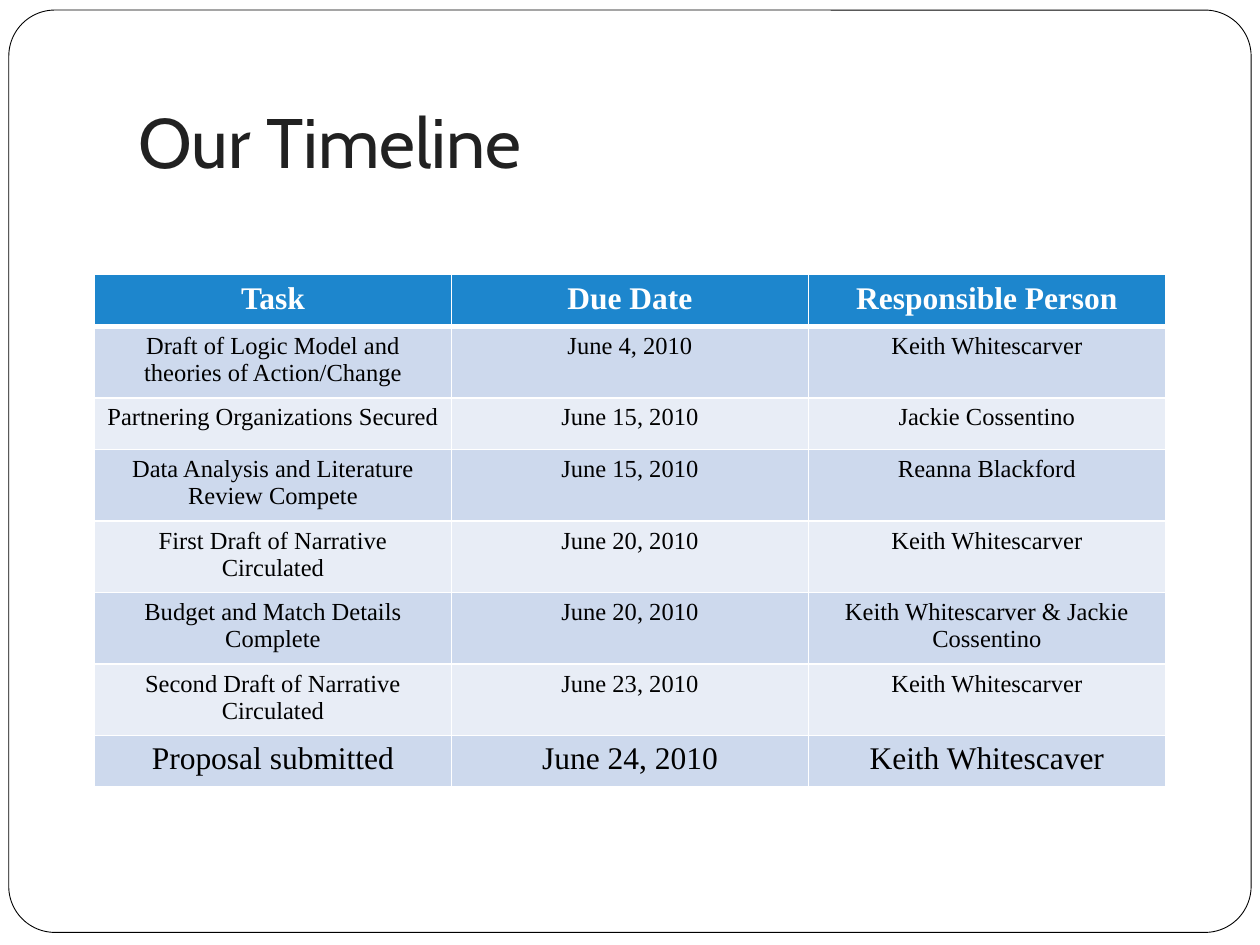
from lxml.etree import SubElement
from pptx import Presentation
from pptx.dml.color import RGBColor
from pptx.enum.shapes import MSO_SHAPE
from pptx.enum.text import MSO_ANCHOR, PP_ALIGN
from pptx.oxml.ns import qn
from pptx.util import Inches, Pt

WHITE, BLACK = "FFFFFF", "000000"
HEADER_FILL, BAND_FILLS = "1D86CD", ("CDD9ED", "E8EDF6")
ROW_HEIGHT = 0.41

HEADINGS = ("Task", "Due Date", "Responsible Person")
TASKS = (
    ("Draft of Logic Model and theories of Action/Change", "June 4, 2010", "Keith Whitescarver"),
    ("Partnering Organizations Secured", "June 15, 2010", "Jackie Cossentino"),
    ("Data Analysis and Literature Review Compete", "June 15, 2010", "Reanna Blackford"),
    ("First Draft of Narrative Circulated", "June 20, 2010", "Keith Whitescarver"),
    ("Budget and Match Details Complete", "June 20, 2010", "Keith Whitescarver & Jackie Cossentino"),
    ("Second Draft of Narrative Circulated", "June 23, 2010", "Keith Whitescarver"),
    ("Proposal submitted", "June 24, 2010", "Keith Whitescaver"),
)


def color(hex_text):
    return RGBColor.from_string(hex_text)


def add_span(para, text, font, size, hex_text, bold=False):
    span = para.add_run()
    span.text = text
    span.font.name = font
    span.font.size = Pt(size)
    span.font.bold = bold
    span.font.color.rgb = color(hex_text)


def add_frame(page):
    frame = page.shapes.add_shape(MSO_SHAPE.ROUNDED_RECTANGLE, Inches(0.07), Inches(0.08),
                                  Inches(9.86), Inches(7.32))
    frame.adjustments[0] = 0.05
    frame.shadow.inherit = False
    frame.fill.solid()
    frame.fill.fore_color.rgb = color(WHITE)
    frame.line.color.rgb = color(BLACK)
    frame.line.width = Pt(0.5)


def add_title(page, text):
    box = page.shapes.add_textbox(Inches(1), Inches(0.3), Inches(8.5), Inches(1.25))
    text_frame = box.text_frame
    text_frame.word_wrap = True
    text_frame.vertical_anchor = MSO_ANCHOR.BOTTOM
    text_frame.margin_bottom = Inches(0.1)
    add_span(text_frame.paragraphs[0], text, "Cabin", 40, "212121")


def set_borders(cell, top, bottom):
    properties = cell._tc.get_or_add_tcPr()
    for side, width in (("L", 1), ("R", 1), ("T", top), ("B", bottom)):
        line = SubElement(properties, qn(f"a:ln{side}"), w=str(Pt(width)))
        fill = SubElement(line, qn("a:solidFill"))
        SubElement(fill, qn("a:srgbClr"), val=WHITE)


def fill_row(table, row, values, fill, size, text_color=BLACK, bold=False):
    # A thick rule parts the headings from the tasks
    top, bottom = (3 if row == 1 else 1), (3 if row == 0 else 1)
    table.rows[row].height = Inches(ROW_HEIGHT)
    for column, value in enumerate(values):
        cell = table.cell(row, column)
        set_borders(cell, top, bottom)
        cell.fill.solid()
        cell.fill.fore_color.rgb = color(fill)
        para = cell.text_frame.paragraphs[0]
        para.alignment = PP_ALIGN.CENTER
        add_span(para, value, "Times New Roman", size, text_color, bold)


def add_timeline(page):
    rows = len(TASKS) + 1
    table = page.shapes.add_table(rows, len(HEADINGS), Inches(0.75), Inches(2.18),
                                  Inches(8.5), Inches(rows * ROW_HEIGHT)).table
    fill_row(table, 0, HEADINGS, HEADER_FILL, 18, WHITE, bold=True)
    for row, task in enumerate(TASKS, start=1):
        size = 18 if row == len(TASKS) else 14
        fill_row(table, row, task, BAND_FILLS[(row - 1) % 2], size)


def main():
    deck = Presentation()
    deck.slide_width, deck.slide_height = Inches(10), Inches(7.5)
    page = deck.slides.add_slide(deck.slide_layouts[6])
    add_frame(page)
    add_title(page, "Our Timeline")
    add_timeline(page)
    deck.save("out.pptx")


if __name__ == "__main__":
    main()
